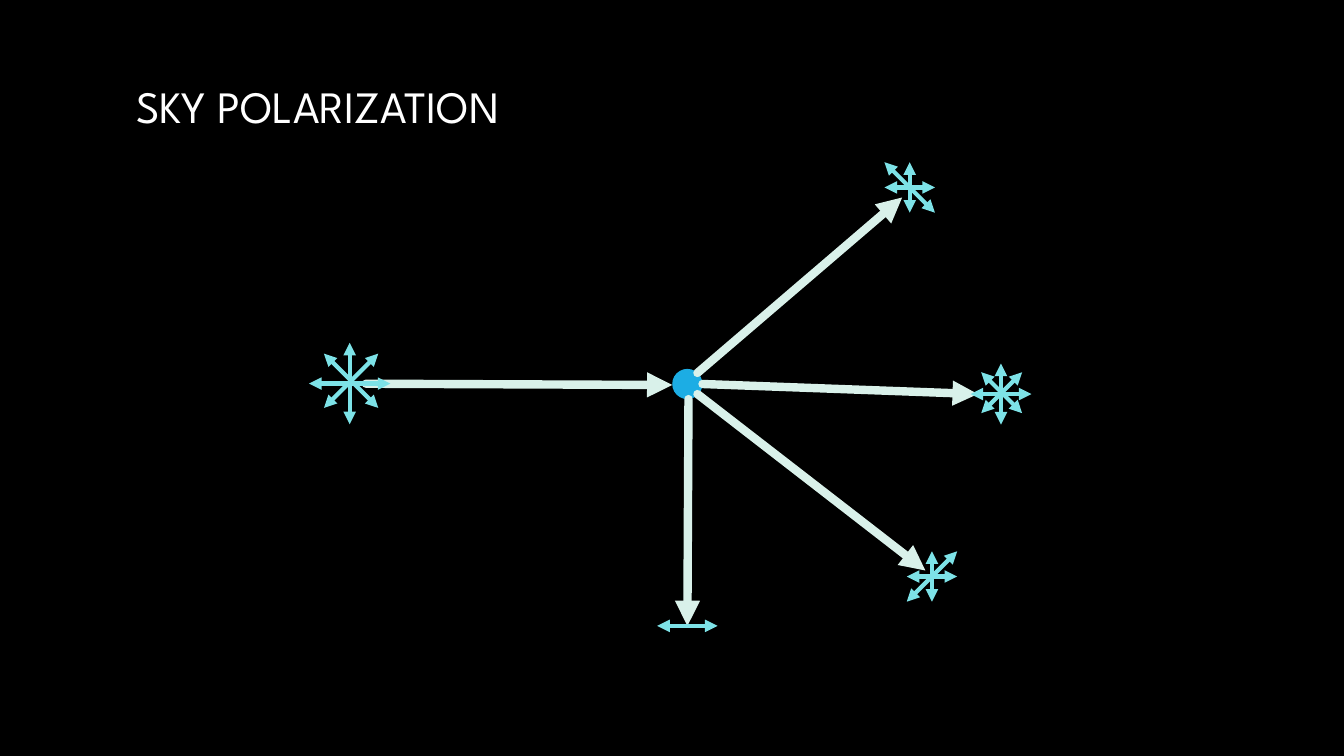
import pptx
import pptx.dml.color
import pptx.enum.shapes
import pptx.enum.text
import pptx.oxml
import pptx.oxml.ns
import pptx.util

Pt = pptx.util.Pt
RGB = pptx.dml.color.RGBColor.from_string

THEME = {
    "background": RGB("000000"),
    "title_top": RGB("FFFFFF"),
    "title_bottom": RGB("A6A6A6"),
    "ray": RGB("D9F1EA"),
    "wave": RGB("7DE2E7"),
    "particle": RGB("1CADE4"),
    "font": "League Spartan",
    "title_size": Pt(32),
    "ray_width": Pt(6),
    "wave_width": Pt(3),
}

deck = pptx.Presentation()
deck.slide_width, deck.slide_height = Pt(960), Pt(540)
page = deck.slides.add_slide(deck.slide_layouts[5])
page.background.fill.solid()
page.background.fill.fore_color.rgb = THEME["background"]


def add_arrow(group, start, end, kind, ends):
    """Draw a line in the theme's kind of stroke, with triangles at the named ends."""
    arrow = group.shapes.add_connector(
        pptx.enum.shapes.MSO_CONNECTOR.STRAIGHT, *map(Pt, start + end))
    arrow.line.color.rgb = THEME[kind]
    arrow.line.width = THEME[kind + "_width"]
    stroke = arrow.line._get_or_add_ln()
    stroke.set("cap", "rnd")
    for name in ends:
        tip = pptx.oxml.parse_xml(
            f'<a:{name} {pptx.oxml.ns.nsdecls("a")} type="triangle"/>')
        stroke.append(tip)
    arrow._element.spPr.append(
        pptx.oxml.parse_xml(f'<a:effectLst {pptx.oxml.ns.nsdecls("a")}/>'))


# Title
title = page.shapes.title
title_place = {"left": Pt(90), "top": Pt(0.7), "width": Pt(780), "height": Pt(150)}
for name, value in title_place.items():
    setattr(title, name, value)
title.text_frame.word_wrap = True
title.text_frame.vertical_anchor = pptx.enum.text.MSO_ANCHOR.MIDDLE
para = title.text_frame.paragraphs[0]
para.alignment = pptx.enum.text.PP_ALIGN.LEFT
span = para.add_run()
span.text = "SKY POLARIZATION"
for name, value in {"name": THEME["font"], "size": THEME["title_size"]}.items():
    setattr(span.font, name, value)
span.font.fill.gradient()
span.font.fill.gradient_angle = 267
for stop, color in zip(span.font.fill.gradient_stops, ("title_top", "title_bottom")):
    stop.color.rgb = THEME[color]

# Sunlight reaching the particle and scattering from it
diagram = page.shapes.add_group_shape()
particle = diagram.shapes.add_shape(
    pptx.enum.shapes.MSO_SHAPE.OVAL, Pt(480.2), Pt(263.5), Pt(21.6), Pt(21.6))
particle.shadow.inherit = False
particle.fill.solid()
particle.fill.fore_color.rgb = THEME["particle"]
particle.line.fill.background()

rays = [
    ((261.4, 274.1), (480.2, 275)),
    ((491.8, 285.1), (491, 447.1)),
    ((498.2, 266.4), (644.4, 141.1)),
    ((498.2, 281.5), (661, 407.5)),
    ((501.8, 274.3), (698.4, 281.5)),
]
for start, end in rays:
    add_arrow(diagram, start, end, "ray", ["tailEnd"])

# Directions of vibration: centre, straight reach, diagonal reach, diagonal shift, axes
AXES = {"upright": (0, 1), "level": (1, 0), "falling": (1, 1), "rising": (1, -1)}
waves = [
    ((715, 281.5), 21.8, 14.6, (0.5, -1), AXES),
    ((491, 447.1), 21.6, 0, (0, 0), ["level"]),
    ((249.8, 274), 29.1, 19.4, (1, -2), AXES),
    ((665.7, 411.8), 18, 18, (0, 0), ["upright", "level", "rising"]),
    ((649.8, 133.9), 18, 18, (0, 0), ["level", "upright", "falling"]),
]
for (center_x, center_y), straight, diagonal, shift, axes in waves:
    for axis in axes:
        across, down = AXES[axis]
        slanted = across != 0 and down != 0
        reach = diagonal if slanted else straight
        x = center_x + shift[0] * slanted
        y = center_y + shift[1] * slanted
        add_arrow(diagram, (x - reach * across, y - reach * down),
                  (x + reach * across, y + reach * down), "wave", ["headEnd", "tailEnd"])

deck.save("out.pptx")
